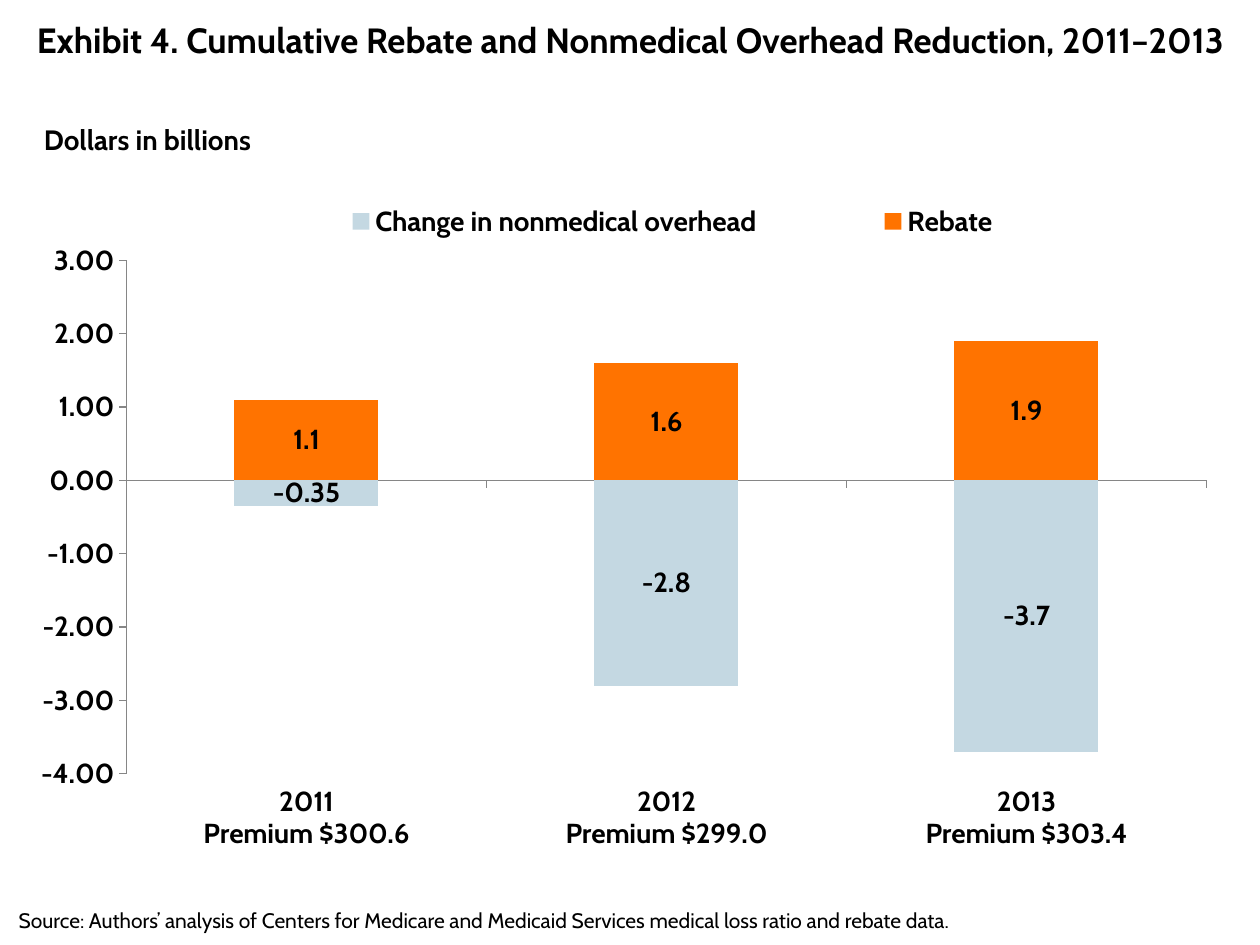
from lxml.etree import SubElement
from pptx import Presentation
from pptx.chart.data import CategoryChartData
from pptx.dml.color import RGBColor
from pptx.enum.chart import (XL_CHART_TYPE, XL_LABEL_POSITION, XL_LEGEND_POSITION,
                             XL_TICK_LABEL_POSITION, XL_TICK_MARK)
from pptx.enum.text import MSO_AUTO_SIZE, PP_ALIGN
from pptx.oxml.ns import qn
from pptx.util import Inches, Pt

BLACK = RGBColor(0x00, 0x00, 0x00)
GRAY = RGBColor(0x86, 0x86, 0x86)
ORANGE = RGBColor(0xFF, 0x73, 0x00)
PALE_BLUE = RGBColor(0xC4, 0xD8, 0xE2)
FONT = "Cabin"

CATEGORIES = ["2011\nPremium $300.6", "2012\nPremium $299.0", "2013\nPremium $303.4"]
SERIES = [
    ("Rebate", [1.1, 1.6, 1.9], ORANGE),
    ("Change in nonmedical overhead", [-0.35, -2.8, -3.7], PALE_BLUE),
]


def style_font(font, size, bold=True):
    font.name = FONT
    font.size = Pt(size)
    font.bold = bold
    font.color.rgb = BLACK


def add_text(s, text, x, y, w, h, size, bold=True, align=PP_ALIGN.LEFT):
    tf = s.shapes.add_textbox(Inches(x), Inches(y), Inches(w), Inches(h)).text_frame
    tf.word_wrap = False
    tf.auto_size = MSO_AUTO_SIZE.SHAPE_TO_FIT_TEXT
    p = tf.paragraphs[0]
    p.text = text
    p.alignment = align
    style_font(p.runs[0].font, size, bold)


def set_layout(element, index, x, y, w, h, inner=False):
    """Place a chart part by fractions of the chart area."""
    for old in element.findall(qn("c:layout")):
        element.remove(old)
    layout = SubElement(element, qn("c:layout"))
    element.insert(index, layout)
    manual = SubElement(layout, qn("c:manualLayout"))
    settings = [("layoutTarget", "inner")] if inner else []
    settings += [("xMode", "edge"), ("yMode", "edge"), ("x", x), ("y", y), ("w", w), ("h", h)]
    for tag, value in settings:
        SubElement(manual, qn(f"c:{tag}")).set("val", str(value))


def style_axis(axis):
    axis.has_major_gridlines = False
    axis.major_tick_mark = XL_TICK_MARK.OUTSIDE
    axis.minor_tick_mark = XL_TICK_MARK.NONE
    axis.format.line.color.rgb = GRAY
    axis.format.line.width = Pt(0.75)
    style_font(axis.tick_labels.font, 16)


def style_series(series, color):
    series.invert_if_negative = False
    series.format.fill.solid()
    series.format.fill.fore_color.rgb = color
    labels = series.data_labels
    labels.show_value = True
    labels.position = XL_LABEL_POSITION.CENTER
    style_font(labels.font, 16)


def add_rebate_chart(s):
    data = CategoryChartData()
    data.categories = CATEGORIES
    for name, values, _ in SERIES:
        data.add_series(name, values)
    chart = s.shapes.add_chart(XL_CHART_TYPE.COLUMN_STACKED, Inches(0.25), Inches(1.5),
                               Inches(9.42), Inches(5.25), data).chart
    chart.has_title = False
    chart.font.name = "Calibri"
    chart.font.size = Pt(18)
    chart.font.color.rgb = BLACK

    # Columns
    plot = chart.plots[0]
    plot.vary_by_categories = False
    plot.gap_width = 150
    plot.overlap = 100
    for series, (_, _, color) in zip(plot.series, SERIES):
        style_series(series, color)
    set_layout(chart._chartSpace.chart.plotArea, 0, 0.08, 0.11, 0.91, 0.79, inner=True)

    # Axes
    style_axis(chart.category_axis)
    chart.category_axis.tick_label_position = XL_TICK_LABEL_POSITION.LOW
    value_axis = chart.value_axis
    style_axis(value_axis)
    value_axis.minimum_scale, value_axis.maximum_scale = -4, 3
    value_axis.major_unit = 1
    value_axis.tick_labels.number_format = "#,##0.00"
    value_axis.tick_labels.number_format_is_linked = False

    # Legend
    chart.has_legend = True
    legend = chart.legend
    legend.position = XL_LEGEND_POSITION.RIGHT
    legend.include_in_layout = False
    style_font(legend.font, 16)
    set_layout(legend._element, 1, 0.17, 0.01, 0.74, 0.08)


def main():
    prs = Presentation()
    prs.slide_width, prs.slide_height = Inches(10), Inches(7.5)
    s = prs.slides.add_slide(prs.slide_layouts[6])

    add_rebate_chart(s)

    # Title, unit and source
    add_text(s, "Exhibit 4. Cumulative Rebate and Nonmedical Overhead Reduction, 2011–2013",
             0.16, 0.1, 9.69, 0.44, 20, align=PP_ALIGN.CENTER)
    add_text(s, "Dollars in billions", 0.25, 0.92, 1.87, 0.37, 16)
    add_text(s, "Source: Authors’ analysis of Centers for Medicare and Medicaid Services "
             "medical loss ratio and rebate data.", 0.05, 7.15, 7.68, 0.3, 12, bold=False)

    prs.save("out.pptx")


if __name__ == "__main__":
    main()
